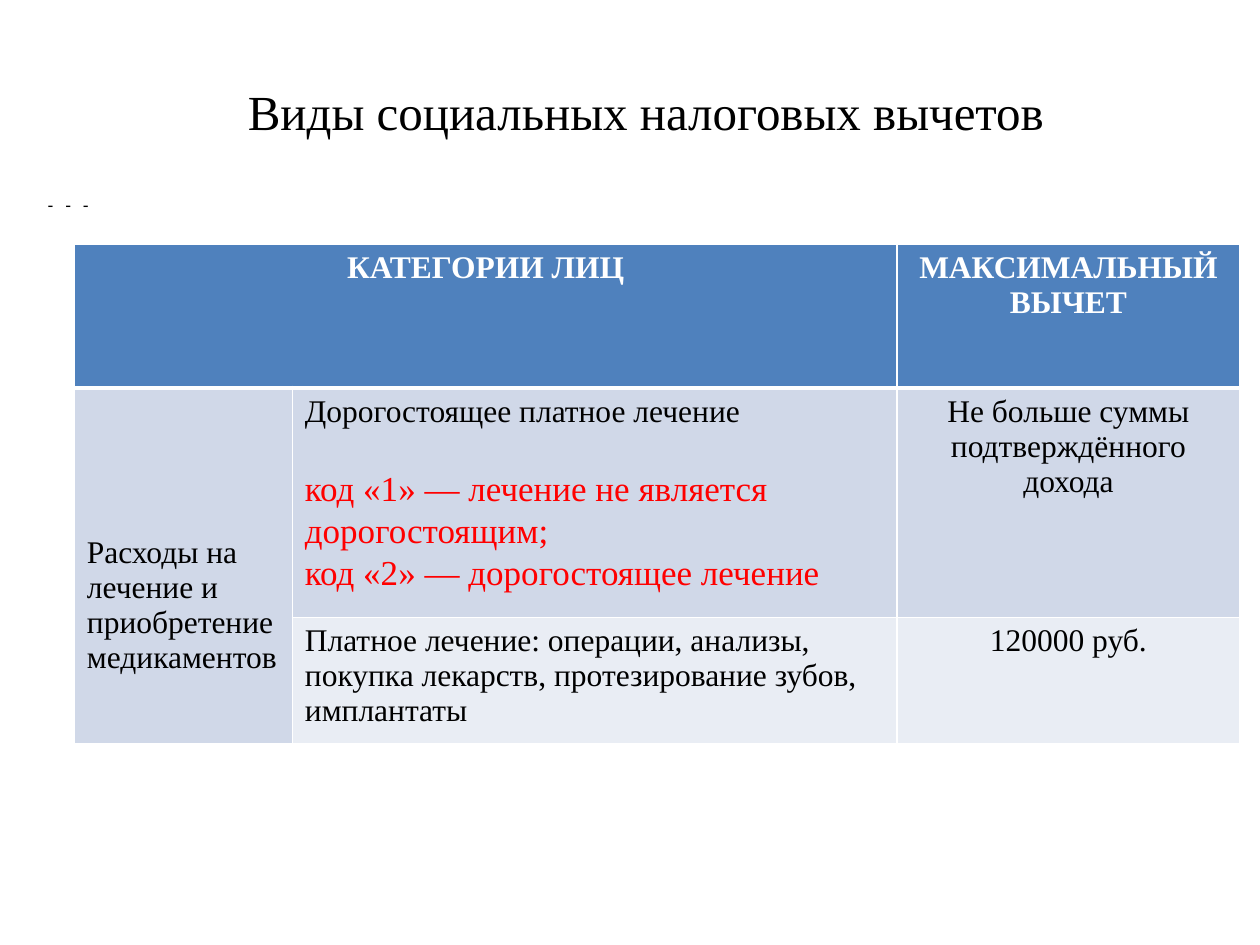
from lxml.etree import SubElement
from pptx import Presentation
from pptx.dml.color import RGBColor
from pptx.enum.text import MSO_ANCHOR, PP_ALIGN
from pptx.oxml.ns import qn
from pptx.util import Inches, Pt

BLACK = RGBColor(0x00, 0x00, 0x00)
WHITE = RGBColor(0xFF, 0xFF, 0xFF)
RED = RGBColor(0xFF, 0x00, 0x00)
BLUE = RGBColor(0x4F, 0x81, 0xBD)
BAND_DARK = RGBColor(0xD0, 0xD8, 0xE8)
BAND_LIGHT = RGBColor(0xE9, 0xED, 0xF4)
SERIF = "Times New Roman"

COLUMNS = (1.73, 4.8, 2.72)
ROWS = (1.14, 1.82, 0.93)
FILLS = (BLUE, BAND_DARK, BAND_LIGHT)
CELLS = (
    ("КАТЕГОРИИ ЛИЦ", None, "МАКСИМАЛЬНЫЙ ВЫЧЕТ"),
    ("Расходы на лечение и приобретение медикаментов",
     "Дорогостоящее платное лечение",
     "Не больше суммы подтверждённого дохода"),
    (None,
     "Платное лечение: операции, анализы, покупка лекарств, "
     "протезирование зубов, имплантаты",
     "120000 руб."),
)
CODES = (
    "код «1» — лечение не является",
    "дорогостоящим;",
    "код «2» — дорогостоящее лечение",
)


def add_run(p, text, size, color, font=SERIF, bold=False):
    r = p.add_run()
    r.text = text
    r.font.name = font
    r.font.size = Pt(size)
    r.font.bold = bold
    r.font.color.rgb = color


def add_text(slide, box, lines, size, color, font=SERIF, align=PP_ALIGN.LEFT,
             top=0.05, left=0.1, anchor=MSO_ANCHOR.TOP, spacing=None):
    sp = slide.shapes.add_textbox(*(Inches(v) for v in box))
    tf = sp.text_frame
    tf.word_wrap = True
    tf.vertical_anchor = anchor
    tf.margin_top = Inches(top)
    tf.margin_left = Inches(left)
    for i, line in enumerate(lines):
        p = tf.add_paragraph() if i else tf.paragraphs[0]
        p.alignment = align
        p.line_spacing = spacing
        add_run(p, line, size, color, font)


def set_borders(cell, bottom):
    tc_pr = cell._tc.get_or_add_tcPr()
    widths = {"a:lnL": 1, "a:lnR": 1, "a:lnT": 1, "a:lnB": bottom}
    for i, (tag, width) in enumerate(widths.items()):
        ln = SubElement(tc_pr, qn(tag), w=str(Pt(width)))
        fill = SubElement(ln, qn("a:solidFill"))
        SubElement(fill, qn("a:srgbClr"), val=str(WHITE))
        tc_pr.insert(i, ln)


def add_deductions_table(slide):
    frame = slide.shapes.add_table(
        len(ROWS), len(COLUMNS), Inches(0.59), Inches(1.94),
        Inches(sum(COLUMNS)), Inches(sum(ROWS)))
    table = frame.table
    for column, width in zip(table.columns, COLUMNS):
        column.width = Inches(width)
    for row, height in zip(table.rows, ROWS):
        row.height = Inches(height)
    table.cell(0, 0).merge(table.cell(0, 1))
    table.cell(1, 0).merge(table.cell(2, 0))
    for i, texts in enumerate(CELLS):
        header = i == 0
        for j, text in enumerate(texts):
            cell = table.cell(i, j)
            cell.fill.solid()
            cell.fill.fore_color.rgb = FILLS[i]
            set_borders(cell, 3 if header else 1)
            if text:
                p = cell.text_frame.paragraphs[0]
                centred = header or j == 2
                p.alignment = PP_ALIGN.CENTER if centred else PP_ALIGN.LEFT
                add_run(p, text, 18, WHITE if header else BLACK, bold=header)
    table.cell(1, 0).margin_top = Inches(1.17)


def main():
    prs = Presentation()
    prs.slide_width = Inches(10)
    prs.slide_height = Inches(7.5)
    slide = prs.slides.add_slide(prs.slide_layouts[6])
    add_text(slide, (0.75, 0.13, 8.75, 1.02), ["Виды социальных налоговых вычетов"],
             28, BLACK, align=PP_ALIGN.CENTER, top=0.53, anchor=MSO_ANCHOR.MIDDLE)
    add_deductions_table(slide)
    for left in (0.28, 0.42, 0.56):
        add_text(slide, (left, 1.15, 9.33, 5.89), ["-"], 10, BLACK, "Arial", top=0.39)
    add_text(slide, (0.73, 1.32, 9.33, 5.89), CODES, 20, RED,
             top=2.38, left=1.69, spacing=Pt(24))
    prs.save("out.pptx")


if __name__ == "__main__":
    main()
